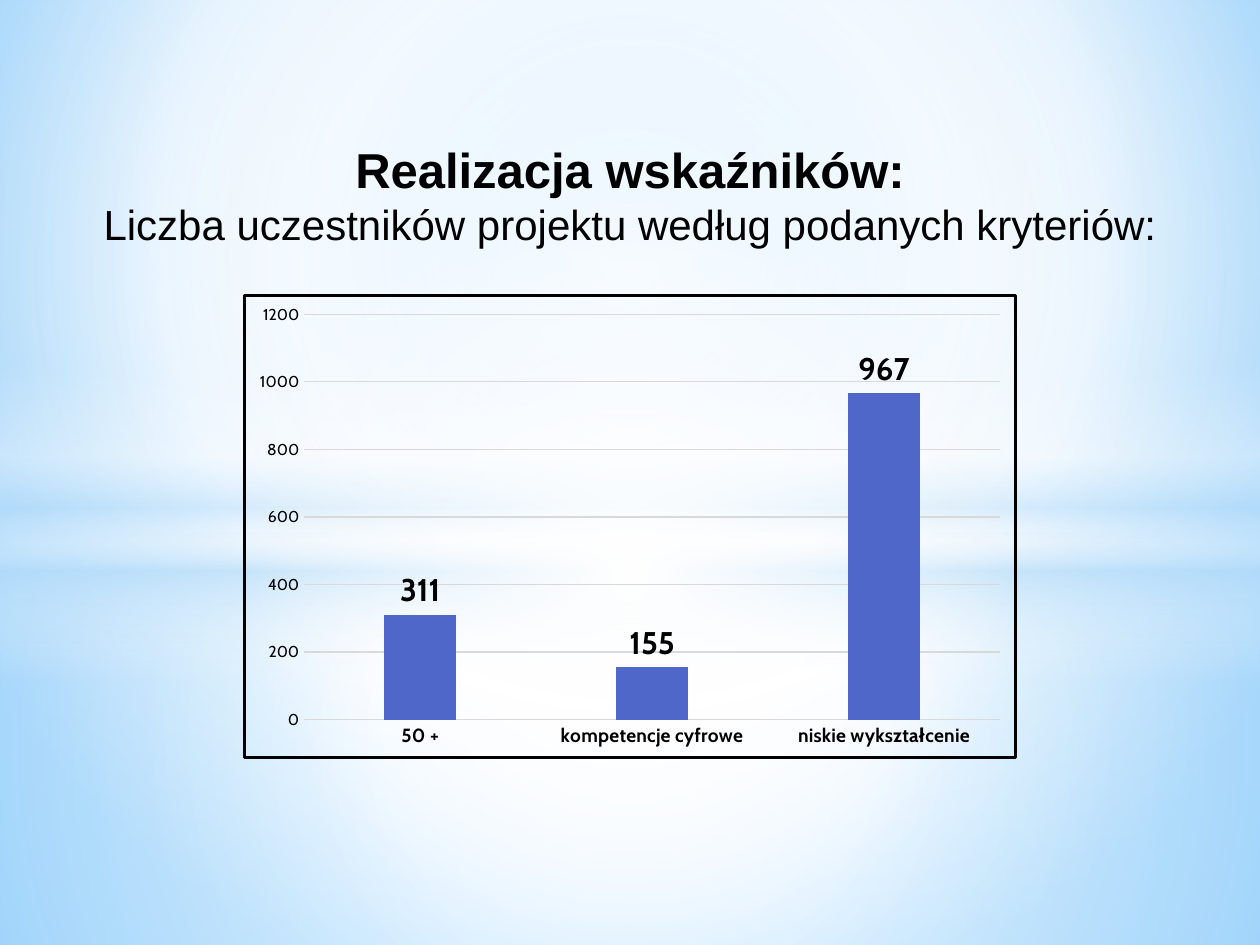
from lxml import etree
from pptx import Presentation
from pptx.chart.data import CategoryChartData
from pptx.dml.color import RGBColor
from pptx.enum.chart import XL_CHART_TYPE as ChartType, XL_LABEL_POSITION as LabelPosition, XL_TICK_MARK as TickMark
from pptx.enum.shapes import MSO_SHAPE as Shape
from pptx.enum.text import PP_ALIGN as Align
from pptx.oxml import parse_xml
from pptx.oxml.ns import nsdecls, qn
from pptx.util import Pt

COLORS = {"text": "000000", "bar": "4E67C8", "grid": "D9D9D9", "white": "FFFFFF",
          "sky": "9ED5FF", "deep": "5BB9FF", "pale": "B4DCFA"}
WIDTH, HEIGHT = 720, 540
CENTER = (50, 50, 50, 50)

# Gradient stops: position %, colour, opacity %
BACKGROUND = [(0, "sky", 100), (60, "white", 100), (100, "deep", 100)]
# Backdrop: shape, top, height, stops, focus (None for a vertical gradient)
BACKDROP = [
    (Shape.RECTANGLE, 304.5, 235.5, [(0, "white", 91), (37, "white", 76), (100, "pale", 79)], CENTER),
    (Shape.RECTANGLE, 0, 304.5, [(0, "white", 89), (48, "white", 62), (100, "pale", 79)], CENTER),
    (Shape.RECTANGLE, 209, 180, [(0, "white", 0), (29, "white", 30), (45, "pale", 40),
                                 (55, "white", 26), (65, "pale", 60), (100, "white", 0)], None),
    (Shape.OVAL, 126, 402, [(0, "white", 100), (54, "white", 0)], CENTER),
]
# Heading: text, size, bold
HEADING = [("Realizacja wskaźników:", 28, True),
           ("Liczba uczestników projektu według podanych kryteriów:", 24, False)]
PARTICIPANTS = {"50 +": 311, "kompetencje cyfrowe": 155, "niskie wykształcenie": 967}


def rgb(name):
    return RGBColor.from_string(COLORS[name])


def set_gradient(fill, owner, stops, focus):
    fill.gradient()
    gradient = next(owner.iter(qn("a:gradFill")))
    stop_xml = "".join(
        f'<a:gs pos="{position * 1000}"><a:srgbClr val="{COLORS[color]}">'
        f'<a:alpha val="{opacity * 1000}"/></a:srgbClr></a:gs>'
        for position, color, opacity in stops)
    if focus:
        sides = " ".join(f'{side}="{value * 1000}"' for side, value in zip("ltrb", focus))
        direction = f'<a:path path="circle"><a:fillToRect {sides}/></a:path>'
    else:
        direction = '<a:lin ang="5400000" scaled="0"/>'
    gradient.getparent().replace(gradient, parse_xml(
        f'<a:gradFill {nsdecls("a")} rotWithShape="1"><a:gsLst>{stop_xml}</a:gsLst>{direction}</a:gradFill>'))


def set_font(font, name, size, bold=False):
    font.name, font.size, font.bold = name, Pt(size), bold
    font.color.rgb = rgb("text")


def add_backdrop(slide):
    set_gradient(slide.background.fill, slide.element, BACKGROUND, (20, 10, 20, 60))
    for kind, top, height, stops, focus in BACKDROP:
        shape = slide.shapes.add_shape(kind, 0, Pt(top), Pt(WIDTH), Pt(height))
        shape.shadow.inherit = False
        shape.line.fill.background()
        set_gradient(shape.fill, shape.element, stops, focus)


def add_heading(slide):
    frame = slide.shapes.add_textbox(0, Pt(76.3), Pt(WIDTH), Pt(70.6)).text_frame
    frame.word_wrap = True
    for index, (text, size, bold) in enumerate(HEADING):
        paragraph = frame.add_paragraph() if index else frame.paragraphs[0]
        paragraph.alignment = Align.CENTER
        run = paragraph.add_run()
        run.text = text
        set_font(run.font, "Arial", size, bold)


def add_participant_chart(slide):
    data = CategoryChartData()
    data.categories = list(PARTICIPANTS)
    data.add_series("Series 1", list(PARTICIPANTS.values()))
    chart = slide.shapes.add_chart(ChartType.COLUMN_CLUSTERED, Pt(139), Pt(168),
                                   Pt(442), Pt(265.5), data).chart
    chart.has_legend = chart.has_title = False
    set_font(chart.font, "Cabin", 10)

    # Columns and value labels
    plot = chart.plots[0]
    plot.gap_width, plot.overlap, plot.vary_by_categories = 219, -27, False
    series = plot.series[0]
    series.format.fill.solid()
    series.format.fill.fore_color.rgb = rgb("bar")
    labels = series.data_labels
    labels.show_value = True
    labels.position = LabelPosition.OUTSIDE_END
    set_font(labels.font, "Cabin", 18, True)

    # Axes
    categories, values = chart.category_axis, chart.value_axis
    for axis, size, bold in ((categories, 11, True), (values, 9, False)):
        axis.major_tick_mark = axis.minor_tick_mark = TickMark.NONE
        set_font(axis.tick_labels.font, "Cabin", size, bold)
    values.minimum_scale, values.maximum_scale, values.major_unit = 0, 1200, 200
    values.format.line.fill.background()
    for line in (categories.format.line, values.major_gridlines.format.line):
        line.color.rgb = rgb("grid")
        line.width = Pt(0.75)

    # Transparent chart area with a border
    area = parse_xml(f'<c:spPr {nsdecls("c", "a")}><a:noFill/></c:spPr>')
    border = etree.SubElement(area, qn("a:ln"), w=str(Pt(1.5)))
    fill = etree.SubElement(border, qn("a:solidFill"))
    etree.SubElement(fill, qn("a:srgbClr"), val=COLORS["text"])
    etree.SubElement(border, qn("a:round"))
    chart.element.find(qn("c:chart")).addnext(area)


def main():
    presentation = Presentation()
    presentation.slide_width, presentation.slide_height = Pt(WIDTH), Pt(HEIGHT)
    slide = presentation.slides.add_slide(presentation.slide_layouts[6])
    add_backdrop(slide)
    add_heading(slide)
    add_participant_chart(slide)
    presentation.save("out.pptx")


if __name__ == "__main__":
    main()
